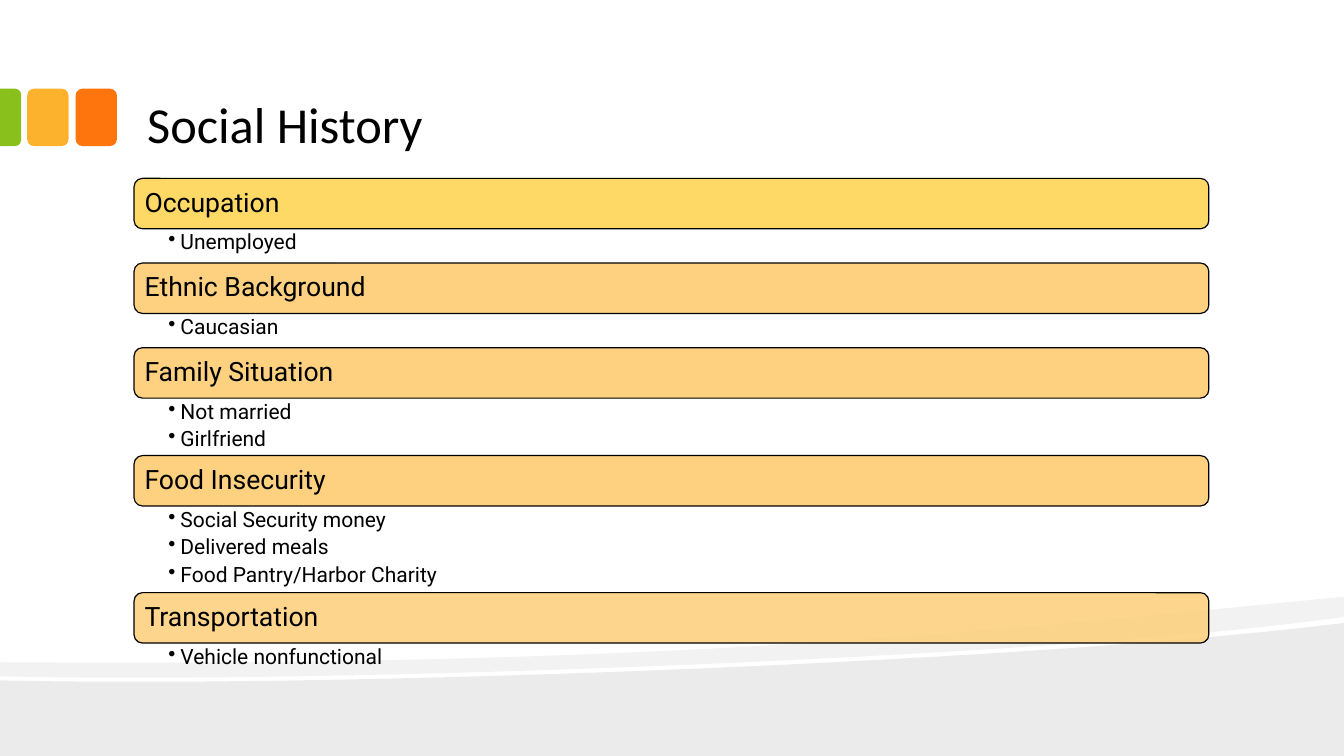
from dataclasses import dataclass

from lxml.etree import SubElement
from pptx import Presentation
from pptx.dml.color import RGBColor
from pptx.enum.shapes import MSO_SHAPE
from pptx.enum.text import MSO_ANCHOR
from pptx.oxml.ns import qn
from pptx.util import Inches, Pt


@dataclass(frozen=True)
class Theme:
    ink: str = "000000"
    green: str = "89C01C"
    amber: str = "FCB22C"
    orange: str = "FE750E"
    gold: str = "FFC000"
    peach: str = "FDD180"
    title_font: str = "Calibri"
    body_font: str = "Roboto"
    title_size: float = 36
    heading_size: float = 19
    detail_size: float = 15
    outline: float = 0.85


PAGE_WIDTH, PAGE_HEIGHT = 13.33, 7.5
LEFT, WIDTH = 1.33, 10.66
FIRST_TOP, BAR_HEIGHT = 1.77, 0.5
DETAIL_HEIGHTS = {1: 0.34, 2: 0.57, 3: 0.86}

# Heading, fill name, fill opacity in percent, details
SECTIONS = [
    ("Occupation", "gold", 60, ["Unemployed"]),
    ("Ethnic Background", "peach", 100, ["Caucasian"]),
    ("Family Situation", "peach", 100, ["Not married", "Girlfriend"]),
    ("Food Insecurity", "peach", 100,
     ["Social Security money", "Delivered meals", "Food Pantry/Harbor Charity"]),
    ("Transportation", "peach", 90, ["Vehicle nonfunctional"]),
]


def curve(start, first, second, end, steps=24):
    """Return points along a cubic Bezier curve, both ends included."""
    points = []
    for step in range(steps + 1):
        t = step / steps
        weights = ((1 - t) ** 3, 3 * t * (1 - t) ** 2, 3 * t * t * (1 - t), t ** 3)
        points.append(tuple(
            sum(weight * value for weight, value in zip(weights, axis))
            for axis in zip(start, first, second, end)))
    return points


class SlideBuilder:
    def __init__(self, page, theme):
        self.page = page
        self.theme = theme

    def paint(self, shape, color, opacity=100, outlined=False):
        shape.shadow.inherit = False
        shape.fill.solid()
        shape.fill.fore_color.rgb = RGBColor.from_string(color)
        if opacity < 100:
            color_node = shape.element.spPr.find(qn("a:solidFill"))[0]
            SubElement(color_node, qn("a:alpha"), val=str(opacity * 1000))
        if outlined:
            shape.line.color.rgb = RGBColor.from_string(self.theme.ink)
            shape.line.width = Pt(self.theme.outline)
        else:
            shape.line.fill.background()

    def shape(self, kind, left, top, width, height, color, **style):
        shape = self.page.shapes.add_shape(
            kind, Inches(left), Inches(top), Inches(width), Inches(height))
        self.paint(shape, color, **style)
        return shape

    def wave(self, points, opacity):
        corners = [(Inches(x), Inches(y)) for x, y in points]
        outline = self.page.shapes.build_freeform(*corners[0])
        outline.add_line_segments(corners[1:], close=True)
        self.paint(outline.convert_to_shape(), self.theme.ink, opacity)

    def text_box(self, left, top, width, height):
        return self.page.shapes.add_textbox(
            Inches(left), Inches(top), Inches(width), Inches(height))

    def set_text(self, shape, lines, *, font, size, insets, anchor=MSO_ANCHOR.TOP,
                 line_spacing=None, space_after=0, bulleted=False):
        """Fill a shape with paragraphs; insets run left, top, right, bottom."""
        frame = shape.text_frame
        frame.word_wrap = True
        frame.vertical_anchor = anchor
        (frame.margin_left, frame.margin_top,
         frame.margin_right, frame.margin_bottom) = map(Inches, insets)
        frame.text = "\n".join(lines)
        for para in frame.paragraphs:
            para.line_spacing = line_spacing
            para.space_after = Pt(space_after)
            properties = para._p.get_or_add_pPr()
            properties.set("algn", "l")
            if bulleted:
                properties.set("marL", str(Inches(0.12)))
                properties.set("indent", str(Inches(-0.12)))
                SubElement(properties, qn("a:buChar"), char="•")
            for span in para.runs:
                span.font.name = font
                span.font.size = Pt(size)
                span.font.color.rgb = RGBColor.from_string(self.theme.ink)

    def title(self, text):
        self.set_text(self.text_box(LEFT, 0.17, WIDTH, 1.42), [text],
                      font=self.theme.title_font, size=self.theme.title_size,
                      insets=(0.13, 0.07, 0.13, 0.07), anchor=MSO_ANCHOR.BOTTOM)

    def section(self, top, heading, color, opacity, details):
        """Draw a heading bar with its bullets and return the next top."""
        bar = self.shape(MSO_SHAPE.ROUNDED_RECTANGLE, LEFT, top, WIDTH, BAR_HEIGHT,
                         color, opacity=opacity, outlined=True)
        self.set_text(bar, [heading], font=self.theme.body_font,
                      size=self.theme.heading_size, insets=(0.08, 0.08, 0.08, 0.08),
                      anchor=MSO_ANCHOR.MIDDLE, line_spacing=0.9)
        height = DETAIL_HEIGHTS[len(details)]
        box = self.text_box(LEFT, top + BAR_HEIGHT, WIDTH, height)
        self.set_text(box, details, font=self.theme.body_font,
                      size=self.theme.detail_size, insets=(0.34, 0.03, 0.15, 0.03),
                      line_spacing=0.9, space_after=3.5, bulleted=True)
        return top + BAR_HEIGHT + height


def main():
    deck = Presentation()
    deck.slide_width, deck.slide_height = Inches(PAGE_WIDTH), Inches(PAGE_HEIGHT)
    theme = Theme()
    builder = SlideBuilder(deck.slides.add_slide(deck.slide_layouts[6]), theme)

    lower_edge = curve((0, 6.75), (3.52, 6.83), (10.42, 6.55), (PAGE_WIDTH, 6.18))
    builder.wave([(PAGE_WIDTH, PAGE_HEIGHT), (0, PAGE_HEIGHT), *lower_edge], opacity=8)
    band = [
        *curve((PAGE_WIDTH, 6.12), (12.55, 6.23), (11.49, 6.33), (10.29, 6.41)),
        *curve((10.29, 6.41), (6.98, 6.63), (2.58, 6.77), (0, 6.71))[1:],
        *curve((0, 6.57), (6.52, 6.62), (9.71, 6.27), (PAGE_WIDTH, 5.92)),
    ]
    builder.wave(band, opacity=5)

    for left, color in ((0.75, theme.orange), (0.27, theme.amber)):
        builder.shape(MSO_SHAPE.ROUNDED_RECTANGLE, left, 0.88, 0.41, 0.57, color)
    edge_tab = builder.shape(MSO_SHAPE.ROUND_2_SAME_RECTANGLE,
                             -0.18, 1.06, 0.57, 0.21, theme.green)
    edge_tab.rotation = 90
    edge_tab.adjustments[0] = 0.29

    builder.title("Social History")
    top = FIRST_TOP
    for heading, color_name, opacity, details in SECTIONS:
        color = {"gold": theme.gold, "peach": theme.peach}[color_name]
        top = builder.section(top, heading, color, opacity, details)
    deck.save("out.pptx")


if __name__ == "__main__":
    main()
